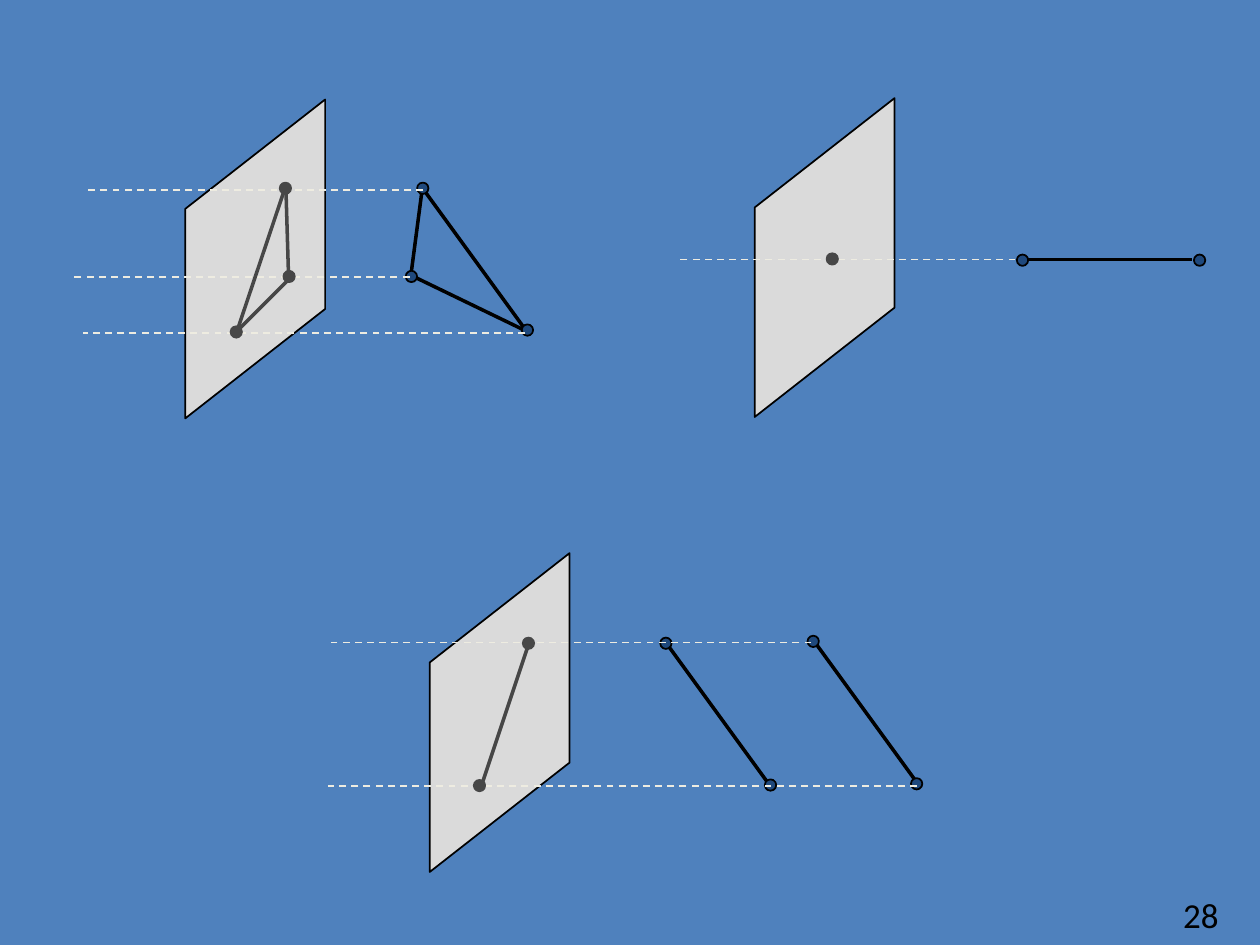
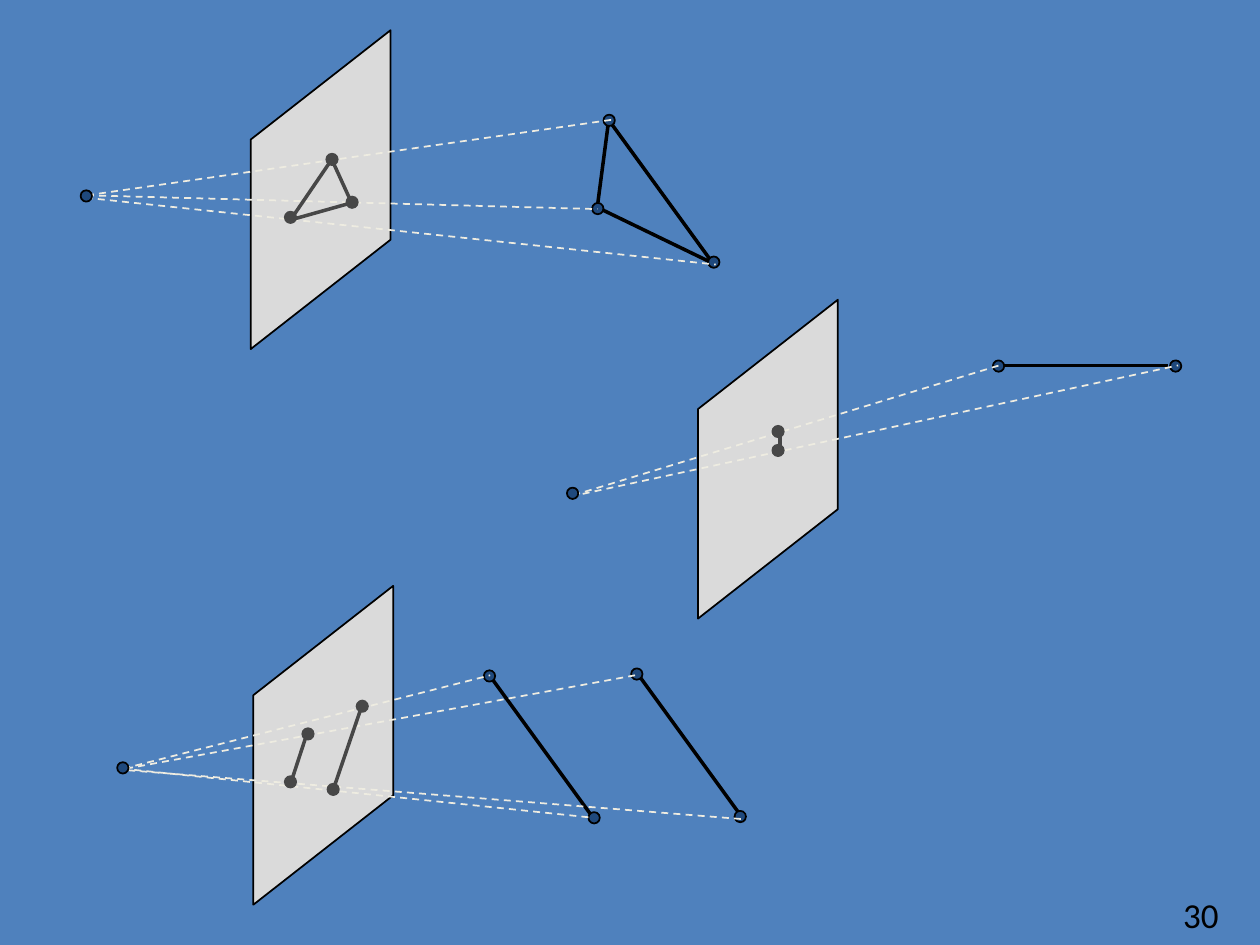
"""Two slides on projecting figures onto a plane: parallel and central."""
from dataclasses import dataclass
from typing import NamedTuple, Optional

from lxml import etree
from pptx import Presentation
from pptx import util as u
from pptx.dml.color import RGBColor
from pptx.enum import dml, shapes, text
from pptx.oxml import ns


@dataclass(frozen=True)
class Theme:
    background: RGBColor = RGBColor(0x4F, 0x81, 0xBD)
    plane: RGBColor = RGBColor(0xDA, 0xDA, 0xDA)
    ink: RGBColor = RGBColor(0, 0, 0)
    vertex: RGBColor = RGBColor(0x1F, 0x49, 0x7D)
    image: RGBColor = RGBColor(0x47, 0x47, 0x47)
    ray: RGBColor = RGBColor(0xEE, 0xEC, 0xE1)
    font: str = "Calibri"
    number_size: float = 20
    thin: float = 1
    thick: float = 2


THEME = Theme()
SLIDE_WIDTH, SLIDE_HEIGHT = 720, 540
PLANE_LENGTH, PLANE_DEPTH, PLANE_SLANT = 182.2, 79.9, 0.782
DOT_SIZE = 6.5


# All coordinates are in points
class Point(NamedTuple):
    x: float
    y: float


class Segment(NamedTuple):
    x1: float
    y1: float
    x2: float
    y2: float


@dataclass(frozen=True)
class Figure:
    """Dots and the edges between them."""
    dots: list[Point]
    edges: list[Segment]

    def moved(self, dx: float, dy: float) -> "Figure":
        return Figure(
            [Point(x + dx, y + dy) for x, y in self.dots],
            [Segment(x1 + dx, y1 + dy, x2 + dx, y2 + dy)
             for x1, y1, x2, y2 in self.edges])


@dataclass(frozen=True)
class Projection:
    plane_center: Point
    solid: Figure
    rays: list[Segment]
    image: Figure
    eye: Optional[Point] = None


@dataclass(frozen=True)
class Page:
    number: str
    projections: list[Projection]


def level_ray(start: float, end: float, y: float) -> Segment:
    return Segment(start, y, end, y)


# Projected figures, relative to their first dot
TRIANGLE = Figure(
    [Point(0, 0), Point(59.8, 81), Point(-6.5, 50.4)],
    [Segment(0.7, 1.1, 60.1, 82.8), Segment(-0.4, 0.9, -6.8, 49.7),
     Segment(-6.8, 49.7, 58.7, 81.4)])
LEVEL_LINE = Figure([Point(0, 0), Point(101.2, 0)],
                    [Segment(3.2, -0.4, 96.8, -0.4)])
PARALLEL_LINES = Figure(
    [Point(0, 0), Point(59.8, 81), Point(84.2, -1.1), Point(143.3, 80.3)],
    [Segment(1.1, 1.1, 58.7, 80.3), Segment(85.3, -0.4, 142.9, 78.8)])

PARALLEL_PAGE = Page("28", [
    Projection(
        Point(471.2, 147.2), LEVEL_LINE.moved(584.3, 148.7),
        [level_ray(580.3, 388.8, 148.3)],
        Figure([Point(475.6, 148)], [])),
    Projection(
        Point(145.8, 148), TRIANGLE.moved(241.6, 107.6),
        [level_ray(241.9, 50.4, 108.7), level_ray(300.2, 47.5, 190.1),
         level_ray(234, 42.5, 158.4)],
        Figure([Point(163.1, 107.6), Point(135, 189.7), Point(165.2, 158)],
               [Segment(162.7, 108, 135.4, 189.4),
                Segment(163.4, 108, 164.9, 158.4),
                Segment(166.3, 158.4, 134.6, 190.1)])),
    Projection(
        Point(285.5, 407.2), PARALLEL_LINES.moved(380.5, 367.6),
        [level_ray(463.7, 189.4, 367.2), level_ray(524.2, 187.2, 449.3)],
        Figure([Point(302, 367.6), Point(274, 448.9)],
               [Segment(302.4, 367.2, 275, 449.3)])),
])

CENTRAL_PAGE = Page("30", [
    Projection(
        Point(183.2, 108.4), TRIANGLE.moved(348.1, 68.8),
        [Segment(49.7, 111.6, 349.9, 68.4), Segment(49.7, 111.6, 341.3, 119.5),
         Segment(49, 113, 409, 151.2)],
        Figure([Point(189.7, 91.1), Point(201.2, 115.6), Point(166, 124.2)],
               [Segment(189.4, 91.4, 166.3, 125.3),
                Segment(190.1, 92.2, 200.9, 115.9),
                Segment(200.9, 115.9, 164.9, 126)]),
        eye=Point(49.3, 112)),
    Projection(
        Point(184.7, 425.9), PARALLEL_LINES.moved(279.7, 386.3),
        [Segment(362.9, 385.9, 68.4, 439.9), Segment(423.4, 468, 69.8, 439.9),
         Segment(70.6, 439.2, 280.1, 385.9), Segment(69.8, 439.2, 339.1, 467.3)],
        Figure([Point(207, 403.6), Point(190.4, 451.1),
                Point(176, 419.4), Point(166, 446.8)],
               [Segment(206.6, 403.9, 190.1, 452.2),
                Segment(175, 420.5, 166.3, 447.1)]),
        eye=Point(70.2, 438.8)),
    Projection(
        Point(438.8, 262.4), LEVEL_LINE.moved(570.6, 209.2),
        [Segment(327.6, 283, 571, 208.8), Segment(326.2, 283.7, 673.2, 208.8)],
        Figure([Point(444.6, 246.6), Point(444.6, 257.4)],
               [Segment(445.7, 245.5, 445.7, 259.2)]),
        eye=Point(327.2, 281.9)),
])


# Drawing functions
def add_centered(group, kind, center: Point, width: float, height: float,
                 fill: RGBColor, line: RGBColor):
    shape = group.shapes.add_shape(
        kind, u.Pt(center.x - width / 2), u.Pt(center.y - height / 2),
        u.Pt(width), u.Pt(height))
    shape.shadow.inherit = False
    shape.fill.solid()
    shape.fill.fore_color.rgb = fill
    shape.line.color.rgb = line
    shape.line.width = u.Pt(THEME.thin)
    return shape


def add_plane(group, center: Point) -> None:
    plane = add_centered(group, shapes.MSO_SHAPE.PARALLELOGRAM, center,
                         PLANE_LENGTH, PLANE_DEPTH, THEME.plane, THEME.ink)
    plane.adjustments[0] = PLANE_SLANT
    plane.rotation = 270
    plane.element.spPr.find(ns.qn("a:xfrm")).set("flipH", "1")


def add_dots(group, dots: list[Point], fill: RGBColor, line: RGBColor) -> None:
    for dot in dots:
        add_centered(group, shapes.MSO_SHAPE.OVAL, dot, DOT_SIZE, DOT_SIZE,
                     fill, line)


def add_lines(group, segments: list[Segment], color: RGBColor, width: float,
              dashed: bool = False) -> None:
    for segment in segments:
        connector = group.shapes.add_connector(
            shapes.MSO_CONNECTOR.STRAIGHT, *(u.Pt(value) for value in segment))
        connector.line.color.rgb = color
        connector.line.width = u.Pt(width)
        if dashed:
            connector.line.dash_style = dml.MSO_LINE.DASH
        etree.SubElement(connector.element.spPr, ns.qn("a:effectLst"))


def add_projection(slide, projection: Projection) -> None:
    group = slide.shapes.add_group_shape()
    add_plane(group, projection.plane_center)
    add_lines(group, projection.solid.edges, THEME.ink, THEME.thick)
    add_dots(group, projection.solid.dots, THEME.vertex, THEME.ink)
    add_lines(group, projection.rays, THEME.ray, THEME.thin, dashed=True)
    add_dots(group, projection.image.dots, THEME.image, THEME.image)
    add_lines(group, projection.image.edges, THEME.image, THEME.thick)
    if projection.eye:
        add_dots(group, [projection.eye], THEME.vertex, THEME.ink)


def add_page_number(slide, number: str) -> None:
    box = slide.shapes.add_textbox(u.Pt(535.7), u.Pt(508.3),
                                   u.Pt(167.8), u.Pt(28.8))
    frame = box.text_frame
    frame.word_wrap = True
    frame.vertical_anchor = text.MSO_ANCHOR.MIDDLE
    paragraph = frame.paragraphs[0]
    paragraph.text = number
    paragraph.alignment = text.PP_ALIGN.RIGHT
    paragraph.font.name = THEME.font
    paragraph.font.size = u.Pt(THEME.number_size)
    paragraph.font.color.rgb = THEME.ink


def add_page(presentation, page: Page) -> None:
    slide = presentation.slides.add_slide(presentation.slide_layouts[6])
    slide.background.fill.solid()
    slide.background.fill.fore_color.rgb = THEME.background
    add_page_number(slide, page.number)
    for projection in page.projections:
        add_projection(slide, projection)


def main() -> None:
    presentation = Presentation()
    presentation.slide_width = u.Pt(SLIDE_WIDTH)
    presentation.slide_height = u.Pt(SLIDE_HEIGHT)
    for page in (PARALLEL_PAGE, CENTRAL_PAGE):
        add_page(presentation, page)
    presentation.save("out.pptx")


if __name__ == "__main__":
    main()
